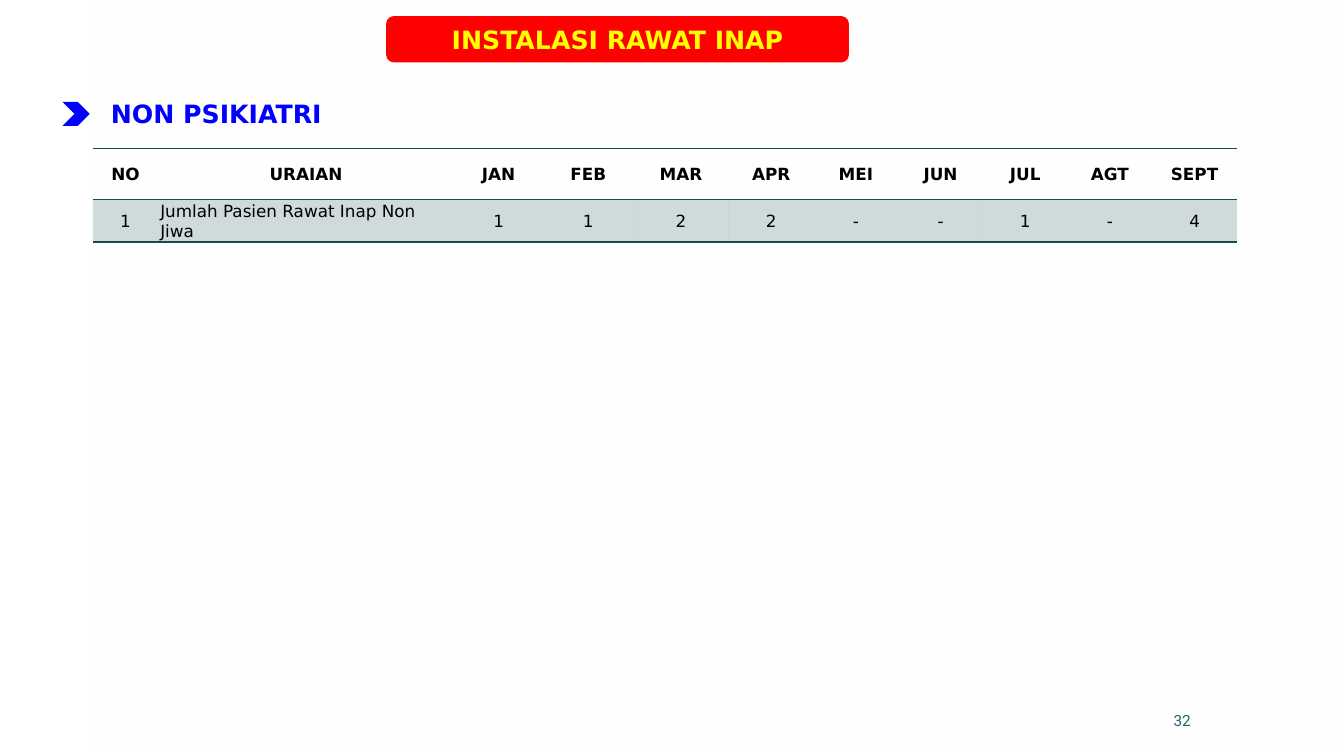
from lxml import etree
from pptx import Presentation, util as u
from pptx.dml.color import RGBColor
from pptx.enum import shapes, text
from pptx.oxml.ns import qn

WIDTH, HEIGHT = 13.33, 7.5
FONT, TEAL, BLUE = "DejaVu Sans", "164B4F", "0000FF"
CENTER, LEFT, RIGHT = text.PP_ALIGN.CENTER, text.PP_ALIGN.LEFT, text.PP_ALIGN.RIGHT

TITLE, SECTION, PAGE = "INSTALASI RAWAT INAP", "NON PSIKIATRI", "32"
HEADER = ["NO", "URAIAN", "JAN", "FEB", "MAR", "APR", "MEI", "JUN", "JUL", "AGT", "SEPT"]
PATIENTS = ["1", "Jumlah Pasien Rawat Inap Non Jiwa", "1", "1", "2", "2", "-", "-", "1", "-", "4"]
COLUMNS = [0.65, 2.93, 0.89, 0.89, 0.95] + [0.84] * 6
ROWS = [0.51, 0.41]
TABLE_LEFT, TABLE_TOP = 0.92, 1.47
PANEL_LEFT = 0.91


def rgb(value):
    return RGBColor.from_string(value)


def inches(*values):
    return [u.Inches(value) for value in values]


def set_alpha(color_parent, percent):
    color = next(color_parent.iter(qn("a:srgbClr")))
    etree.SubElement(color, qn("a:alpha"), val=str(percent * 1000))


def write(frame, words, align, color, size, bold=True, font=FONT):
    paragraph = frame.paragraphs[0]
    paragraph.alignment = align
    run = paragraph.add_run()
    run.text = words
    style = {"name": font, "size": u.Pt(size), "bold": bold}
    for key, value in style.items():
        setattr(run.font, key, value)
    run.font.color.rgb = rgb(color)


def add_block(slide, kind, box, color=None):
    block = slide.shapes.add_shape(kind, *inches(*box))
    block.shadow.inherit = False
    block.line.fill.background()
    if color:
        block.fill.solid()
        block.fill.fore_color.rgb = rgb(color)
    return block


def add_label(slide, box, wrap, anchor):
    frame = slide.shapes.add_textbox(*inches(*box)).text_frame
    frame.word_wrap = wrap
    frame.vertical_anchor = anchor
    return frame


def add_panel(slide):
    panel = add_block(slide, shapes.MSO_SHAPE.RECTANGLE, (PANEL_LEFT, 0, WIDTH - PANEL_LEFT, HEIGHT))
    panel.fill.gradient()
    panel.fill.gradient_angle = 270
    for stop, position, alpha in zip(panel.fill.gradient_stops, (0, 1), (60, 0)):
        stop.position = position
        stop.color.rgb = rgb("FFFFFF")
    for stop, alpha in zip(panel.element.iter(qn("a:gs")), (60, 0)):
        set_alpha(stop, alpha)


def border_cell(cell, ruled):
    properties = cell._tc.get_or_add_tcPr()
    for index, side in enumerate("LRTB"):
        line = etree.Element(qn("a:ln" + side), w=str(u.Pt(1)))
        if side in ruled:
            fill = etree.SubElement(line, qn("a:solidFill"))
            etree.SubElement(fill, qn("a:srgbClr"), val=TEAL)
        else:
            etree.SubElement(line, qn("a:noFill"))
        properties.insert(index, line)


def add_patient_table(slide):
    box = inches(TABLE_LEFT, TABLE_TOP, sum(COLUMNS), sum(ROWS))
    table = slide.shapes.add_table(len(ROWS), len(COLUMNS), *box).table
    table.first_row = table.horz_banding = False
    for tracks, key, lengths in ((table.columns, "width", COLUMNS), (table.rows, "height", ROWS)):
        for track, length in zip(tracks, lengths):
            setattr(track, key, u.Inches(length))
    for row, entries in enumerate((HEADER, PATIENTS)):
        for column, words in enumerate(entries):
            cell = table.cell(row, column)
            inset = u.Inches(0.01 if row and column > 2 else 0.02)
            layout = {"margin_left": inset, "margin_right": inset, "margin_top": inset,
                      "margin_bottom": 0, "vertical_anchor": text.MSO_ANCHOR.MIDDLE}
            for key, value in layout.items():
                setattr(cell, key, value)
            align = LEFT if row and column == 1 else CENTER
            write(cell.text_frame, words, align, "000000", 12, bold=row == 0)
            if row:
                cell.fill.solid()
                cell.fill.fore_color.rgb = rgb(TEAL)
                set_alpha(cell._tc.tcPr, 20)
            else:
                cell.fill.background()
            border_cell(cell, "TB")


def main():
    """Build the inpatient slide and save it."""
    deck = Presentation()
    deck.slide_width, deck.slide_height = inches(WIDTH, HEIGHT)
    slide = deck.slides.add_slide(deck.slide_layouts[6])
    add_panel(slide)

    page = add_label(slide, (8.8, 6.95, 3.11, 0.4), True, text.MSO_ANCHOR.MIDDLE)
    write(page, PAGE, RIGHT, "1F696F", 11, bold=False, font="Roboto")

    title = add_block(slide, shapes.MSO_SHAPE.ROUNDED_RECTANGLE, (3.83, 0.16, 4.59, 0.46), "FF0000")
    title.text_frame.vertical_anchor = text.MSO_ANCHOR.MIDDLE
    write(title.text_frame, TITLE, CENTER, "FFFF00", 18)

    add_block(slide, shapes.MSO_SHAPE.CHEVRON, (0.62, 1.01, 0.27, 0.24), BLUE)
    section = add_label(slide, (PANEL_LEFT, 0.93, 2.47, 0.4), False, text.MSO_ANCHOR.TOP)
    section.auto_size = text.MSO_AUTO_SIZE.SHAPE_TO_FIT_TEXT
    write(section, SECTION, CENTER, BLUE, 18)

    add_patient_table(slide)
    deck.save("out.pptx")


if __name__ == "__main__":
    main()
